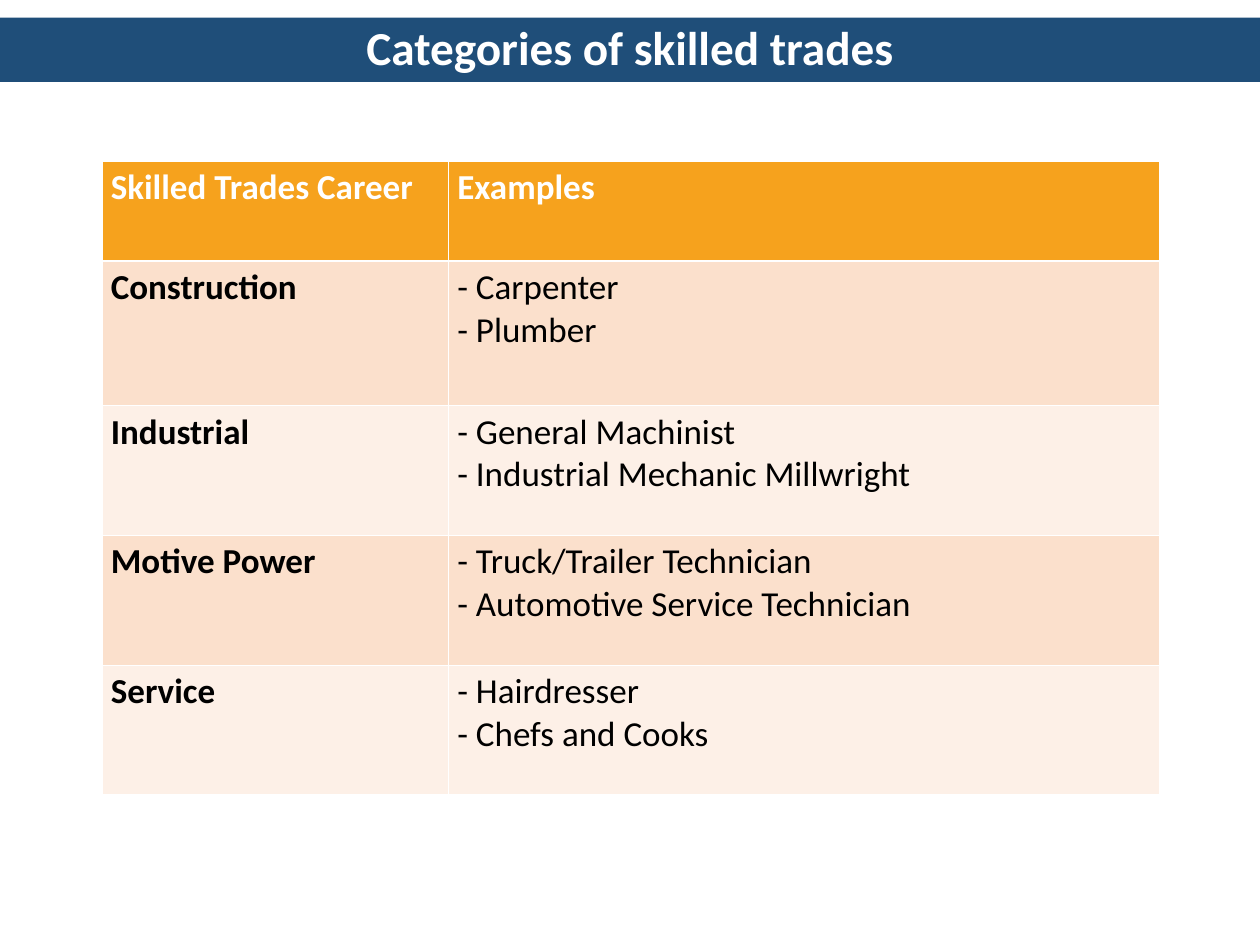
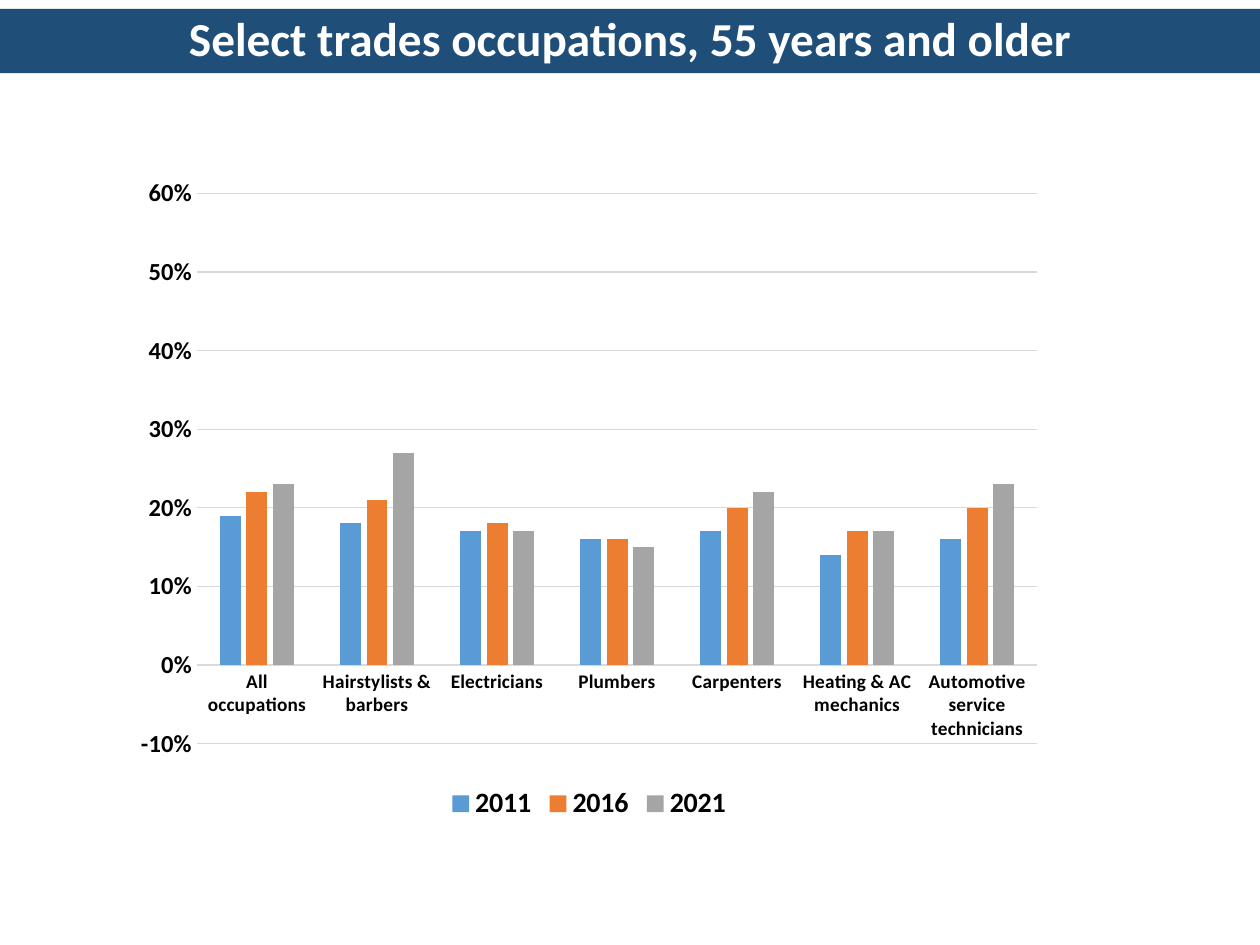
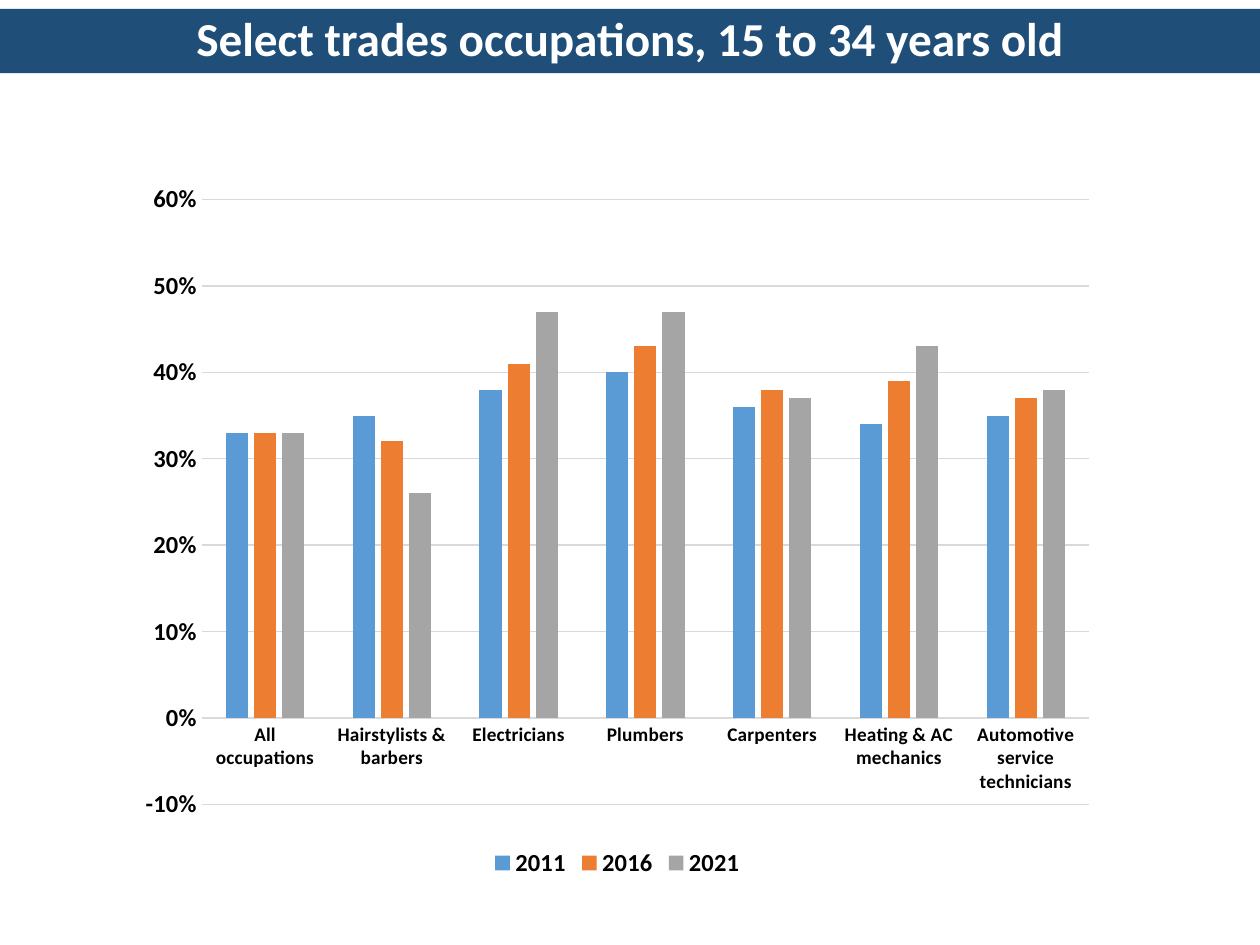
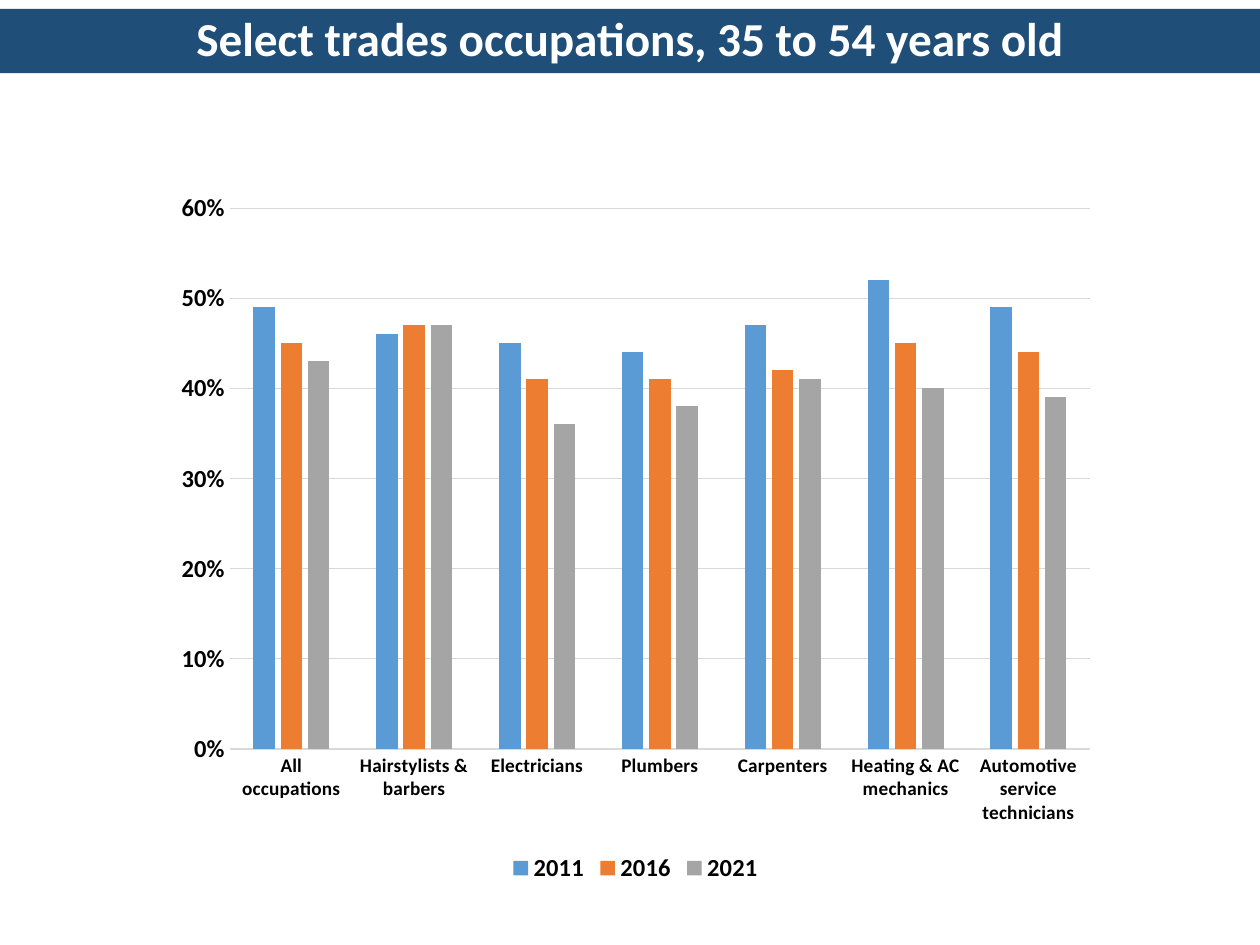
from lxml.etree import SubElement
from pptx import Presentation
from pptx.chart.data import CategoryChartData
from pptx.dml.color import RGBColor
from pptx.enum.chart import XL_CHART_TYPE as ChartType, XL_LEGEND_POSITION as LegendPosition
from pptx.enum.chart import XL_TICK_MARK as TickMark
from pptx.enum.text import MSO_ANCHOR as Anchor, MSO_AUTO_SIZE as AutoSize, PP_ALIGN as Align
from pptx.oxml.ns import qn
from pptx.util import Inches, Pt

NAVY = RGBColor(0x1F, 0x4E, 0x79)
WHITE = RGBColor(0xFF, 0xFF, 0xFF)
BLACK = RGBColor(0x00, 0x00, 0x00)
AMBER = RGBColor(0xF6, 0xA2, 0x1D)
PEACH = RGBColor(0xFB, 0xE0, 0xCC)
CREAM = RGBColor(0xFD, 0xF0, 0xE7)
GRID = RGBColor(0xD9, 0xD9, 0xD9)
BLUE = RGBColor(0x5B, 0x9B, 0xD5)
ORANGE = RGBColor(0xED, 0x7D, 0x31)
GRAY = RGBColor(0xA5, 0xA5, 0xA5)
FONT = "Calibri"

TRADES = [
    ("Skilled Trades Career", ["Examples"]),
    ("Construction", ["- Carpenter", "- Plumber"]),
    ("Industrial", ["- General Machinist", "- Industrial Mechanic Millwright"]),
    ("Motive Power", ["- Truck/Trailer Technician", "- Automotive Service Technician"]),
    ("Service", ["- Hairdresser", "- Chefs and Cooks"]),
]
COLUMN_WIDTHS = [2.75, 5.64]
ROW_HEIGHTS = [0.79, 1.15, 1.03, 1.03, 1.03]

OCCUPATIONS = ["All occupations", "Hairstylists & barbers", "Electricians", "Plumbers",
               "Carpenters", "Heating & AC mechanics", "Automotive service technicians"]
YEARS = [("2011", BLUE), ("2016", ORANGE), ("2021", GRAY)]
AGE_GROUPS = [
    {"title": "Select trades occupations, 55 years and older",
     "area": (0.97, 1.31, 7.41, 5.25), "minimum": -0.1, "legend_size": 16,
     "shares": [(0.19, 0.18, 0.17, 0.16, 0.17, 0.14, 0.16),
                (0.22, 0.21, 0.18, 0.16, 0.2, 0.17, 0.2),
                (0.23, 0.27, 0.17, 0.15, 0.22, 0.17, 0.23)]},
    {"title": "Select trades occupations, 15 to 34 years old",
     "area": (1, 1.35, 7.8, 5.66), "minimum": -0.1, "legend_size": 14,
     "shares": [(0.33, 0.35, 0.38, 0.4, 0.36, 0.34, 0.35),
                (0.33, 0.32, 0.41, 0.43, 0.38, 0.39, 0.37),
                (0.33, 0.26, 0.47, 0.47, 0.37, 0.43, 0.38)]},
    {"title": "Select trades occupations, 35 to 54 years old",
     "area": (1.29, 1.42, 7.51, 5.63), "minimum": 0, "legend_size": 14,
     "shares": [(0.49, 0.46, 0.45, 0.44, 0.47, 0.52, 0.49),
                (0.45, 0.47, 0.41, 0.41, 0.42, 0.45, 0.44),
                (0.43, 0.47, 0.36, 0.38, 0.41, 0.4, 0.39)]},
]


def style_font(font, size, color=BLACK, bold=True):
    font.name = FONT
    font.size = Pt(size)
    font.bold = bold
    font.color.rgb = color


def add_page(deck, title, top):
    page = deck.slides.add_slide(deck.slide_layouts[5])
    band = page.shapes.title
    band.left, band.top = Inches(0), Inches(top)
    band.width, band.height = Inches(10), Inches(0.51)
    band.fill.solid()
    band.fill.fore_color.rgb = NAVY
    frame = band.text_frame
    frame.text = title
    frame.word_wrap = True
    frame.auto_size = AutoSize.NONE
    frame.vertical_anchor = Anchor.MIDDLE
    para = frame.paragraphs[0]
    para.alignment = Align.CENTER
    para.line_spacing = 0.9
    style_font(para.runs[0].font, 27, WHITE)
    return page


def add_borders(cell, row):
    thick_side = {0: "lnB", 1: "lnT"}.get(row)
    properties = cell._tc.get_or_add_tcPr()
    for side in ("lnL", "lnR", "lnT", "lnB"):
        width = Pt(1.6) if side == thick_side else Pt(0.75)
        line = SubElement(properties, qn(f"a:{side}"), w=str(width))
        fill = SubElement(line, qn("a:solidFill"))
        SubElement(fill, qn("a:srgbClr"), val=str(WHITE))


def fill_cell(cell, lines, row, column):
    add_borders(cell, row)
    cell.fill.solid()
    cell.fill.fore_color.rgb = AMBER if row == 0 else PEACH if row % 2 else CREAM
    cell.margin_left = cell.margin_right = Inches(0.07)
    cell.margin_top = cell.margin_bottom = Inches(0.04)
    cell.text_frame.text = "\n".join(lines)
    for para in cell.text_frame.paragraphs:
        for span in para.runs:
            style_font(span.font, 20, WHITE if row == 0 else BLACK, row == 0 or column == 0)


def add_trades_table(page):
    frame = page.shapes.add_table(len(TRADES), len(COLUMN_WIDTHS), Inches(0.81), Inches(1.28),
                                  Inches(sum(COLUMN_WIDTHS)), Inches(sum(ROW_HEIGHTS)))
    table = frame.table
    for column, width in zip(table.columns, COLUMN_WIDTHS):
        column.width = Inches(width)
    for row, height in zip(table.rows, ROW_HEIGHTS):
        row.height = Inches(height)
    for row, (career, examples) in enumerate(TRADES):
        fill_cell(table.cell(row, 0), [career], row, 0)
        fill_cell(table.cell(row, 1), examples, row, 1)


def style_axes(chart, minimum):
    for axis, size in ((chart.category_axis, 11), (chart.value_axis, 14)):
        axis.major_tick_mark = axis.minor_tick_mark = TickMark.NONE
        style_font(axis.tick_labels.font, size)
    category_line = chart.category_axis.format.line
    values = chart.value_axis
    values.minimum_scale, values.maximum_scale = minimum, 0.6
    values.major_unit = 0.1
    values.tick_labels.number_format = "0%"
    values.tick_labels.number_format_is_linked = False
    values.format.line.fill.background()
    for line in (category_line, values.major_gridlines.format.line):
        line.color.rgb = GRID
        line.width = Pt(0.75)


def add_age_chart(page, group):
    data = CategoryChartData(number_format="0%")
    data.categories = OCCUPATIONS
    for (year, color), shares in zip(YEARS, group["shares"]):
        data.add_series(year, shares)
    area = [Inches(length) for length in group["area"]]
    chart = page.shapes.add_chart(ChartType.COLUMN_CLUSTERED, *area, data).chart
    chart.has_title = False
    style_font(chart.font, 10, bold=False)
    style_axes(chart, group["minimum"])
    chart.has_legend = True
    chart.legend.position = LegendPosition.BOTTOM
    chart.legend.include_in_layout = False
    style_font(chart.legend.font, group["legend_size"])
    plot = chart.plots[0]
    plot.gap_width, plot.overlap = 219, -27
    plot.vary_by_categories = False
    for series, (year, color) in zip(plot.series, YEARS):
        series.format.fill.solid()
        series.format.fill.fore_color.rgb = color


def main():
    deck = Presentation()
    deck.slide_width, deck.slide_height = Inches(10), Inches(7.5)
    add_trades_table(add_page(deck, "Categories of skilled trades", 0.14))
    for group in AGE_GROUPS:
        add_age_chart(add_page(deck, group["title"], 0.07), group)
    deck.save("out.pptx")


if __name__ == "__main__":
    main()
